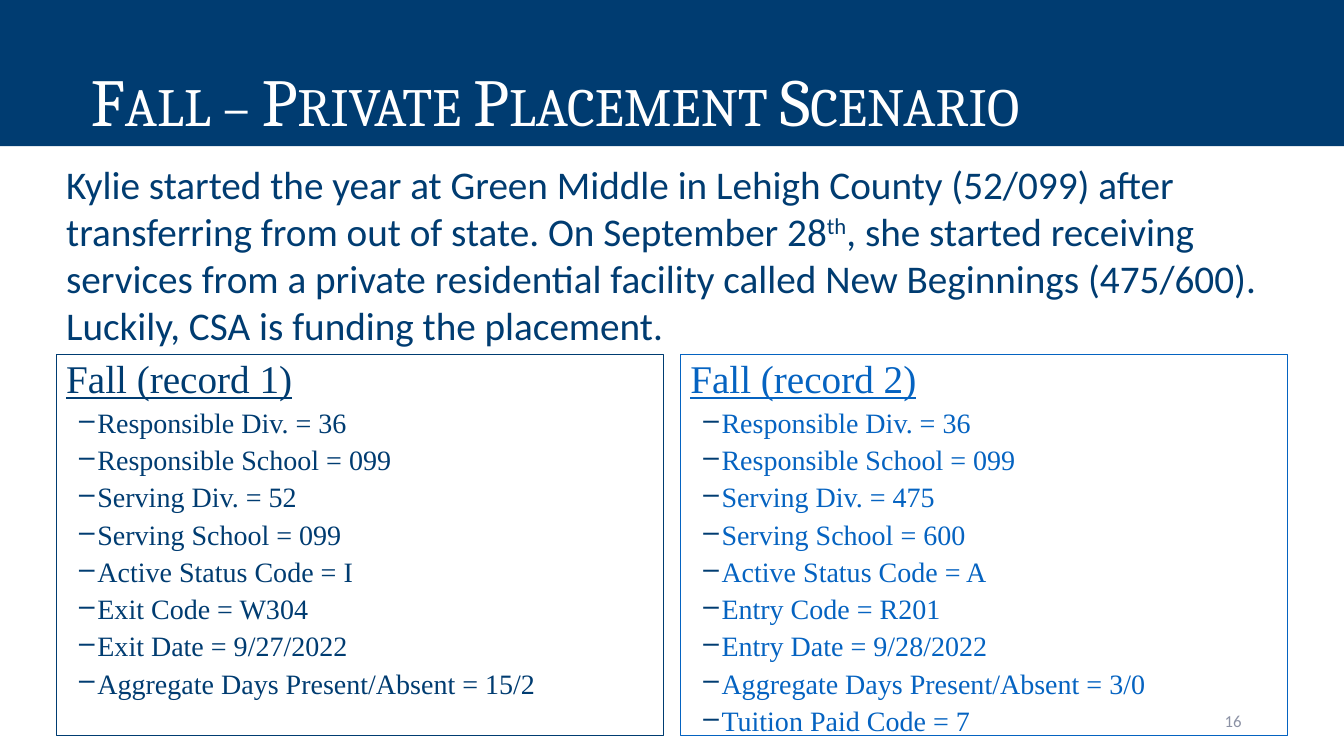
"""Build the private placement scenario slide with its two fall records."""
from dataclasses import dataclass

from lxml import etree
from pptx import Presentation
from pptx.dml.color import RGBColor
from pptx.enum import shapes, text
from pptx.oxml.ns import qn
from pptx.util import Pt

TITLE = "Fall – Private Placement Scenario"
PAGE_NUMBER = "16"
SCENARIO = [
    ("Kylie started the year at Green Middle in Lehigh County (52/099) after "
     "transferring from out of state. On September 28", False),
    ("th", True),
    (", she started receiving services from a private residential facility called "
     "New Beginnings (475/600). Luckily, CSA is funding the placement.", False),
]
RECORDS = [
    ("Fall (record 1)", "003C71", [
        "Responsible Div. = 36",
        "Responsible School = 099",
        "Serving Div. = 52",
        "Serving School = 099",
        "Active Status Code = I",
        "Exit Code = W304",
        "Exit Date = 9/27/2022",
        "Aggregate Days Present/Absent = 15/2",
    ]),
    ("Fall (record 2)", "0563C1", [
        "Responsible Div. = 36",
        "Responsible School = 099",
        "Serving Div. = 475",
        "Serving School = 600",
        "Active Status Code = A",
        "Entry Code = R201",
        "Entry Date = 9/28/2022",
        "Aggregate Days Present/Absent = 3/0",
        "Tuition Paid Code = 7",
    ]),
]


@dataclass(frozen=True)
class Theme:
    """Colours, fonts and type sizes of the slide."""
    navy: str = "003C71"
    white: str = "FFFFFF"
    grey: str = "8C92A5"
    title_font: str = "Cambria"
    body_font: str = "Calibri"
    record_font: str = "Times New Roman"
    title_size: int = 48
    lead_size: int = 28
    field_size: int = 20
    number_size: int = 12


THEME = Theme()
WIDTH, HEIGHT = 960, 540
MARGIN, GUTTER = 40.2, 12
RECORD_TOP, RECORD_HEIGHT = 253.6, 272
RECORD_WIDTH = (WIDTH - 2 * MARGIN - GUTTER) / 2


def place(box, left, top, width, height):
    """Set the position and size of a shape in points."""
    box.left, box.top, box.width, box.height = map(Pt, (left, top, width, height))


def add_span(para, words, font, size, colour):
    """Append one formatted run to a paragraph."""
    span = para.add_run()
    span.text = words
    span.font.name, span.font.size = font, Pt(size)
    span.font.color.rgb = RGBColor.from_string(colour)
    return span


def add_dash(para):
    """Give a paragraph a hanging navy dash."""
    properties = para._p.get_or_add_pPr()
    properties.set("marL", str(Pt(22.3)))
    properties.set("indent", str(Pt(-13)))
    colour = etree.SubElement(properties, qn("a:buClr"))
    etree.SubElement(colour, qn("a:srgbClr"), val=THEME.navy)
    etree.SubElement(properties, qn("a:buChar"), char="–")


def add_title(page):
    """Format the title placeholder as the banner."""
    box = page.shapes.title
    place(box, 0, 0, WIDTH, 104.4)
    box.fill.solid()
    box.fill.fore_color.rgb = RGBColor.from_string(THEME.navy)
    frame = box.text_frame
    frame.auto_size = text.MSO_AUTO_SIZE.NONE
    frame.vertical_anchor = text.MSO_ANCHOR.BOTTOM
    frame.margin_left = Pt(64.8)
    para = frame.paragraphs[0]
    para.alignment, para.line_spacing = text.PP_ALIGN.LEFT, 0.9
    span = add_span(para, TITLE, THEME.title_font, THEME.title_size, THEME.white)
    span.font._element.set("cap", "small")


def add_text_box(page, left, top, width, height):
    """Add a wrapping text box and return its frame."""
    box = page.shapes.add_textbox(*map(Pt, (left, top, width, height)))
    box.text_frame.word_wrap = True
    return box.text_frame


def add_record(page, left, heading, colour, fields):
    """Add one outlined record with its heading and fields."""
    box = page.shapes.add_shape(
        shapes.MSO_SHAPE.RECTANGLE,
        *map(Pt, (left, RECORD_TOP, RECORD_WIDTH, RECORD_HEIGHT)))
    box.shadow.inherit = False
    box.fill.background()
    box.line.color.rgb = RGBColor.from_string(colour)
    box.line.width = Pt(0.75)
    frame = box.text_frame
    frame.word_wrap = True
    frame.vertical_anchor = text.MSO_ANCHOR.TOP
    for index, words in enumerate([heading, *fields]):
        para = frame.add_paragraph() if index else frame.paragraphs[0]
        para.alignment, para.line_spacing = text.PP_ALIGN.LEFT, 0.9
        para.space_before = Pt(5)
        size = THEME.field_size if index else THEME.lead_size
        span = add_span(para, words, THEME.record_font, size, colour)
        if index:
            para.level = 1
            add_dash(para)
        else:
            span.font.underline = True


def main():
    """Create and save the deck."""
    deck = Presentation()
    deck.slide_width, deck.slide_height = Pt(WIDTH), Pt(HEIGHT)
    page = deck.slides.add_slide(deck.slide_layouts[5])
    add_title(page)

    number = add_text_box(page, 678, 500.5, 216, 28.75)
    number.vertical_anchor = text.MSO_ANCHOR.MIDDLE
    number.paragraphs[0].alignment = text.PP_ALIGN.RIGHT
    add_span(number.paragraphs[0], PAGE_NUMBER, THEME.body_font,
             THEME.number_size, THEME.grey)

    for index, (heading, colour, fields) in enumerate(RECORDS):
        left = MARGIN + index * (RECORD_WIDTH + GUTTER)
        add_record(page, left, heading, colour, fields)

    scenario = add_text_box(page, MARGIN, 111, WIDTH - 2 * MARGIN, 143)
    for words, raised in SCENARIO:
        span = add_span(scenario.paragraphs[0], words, THEME.body_font,
                        THEME.lead_size, THEME.navy)
        if raised:
            span.font._element.set("baseline", "30000")

    deck.save("out.pptx")


if __name__ == "__main__":
    main()
